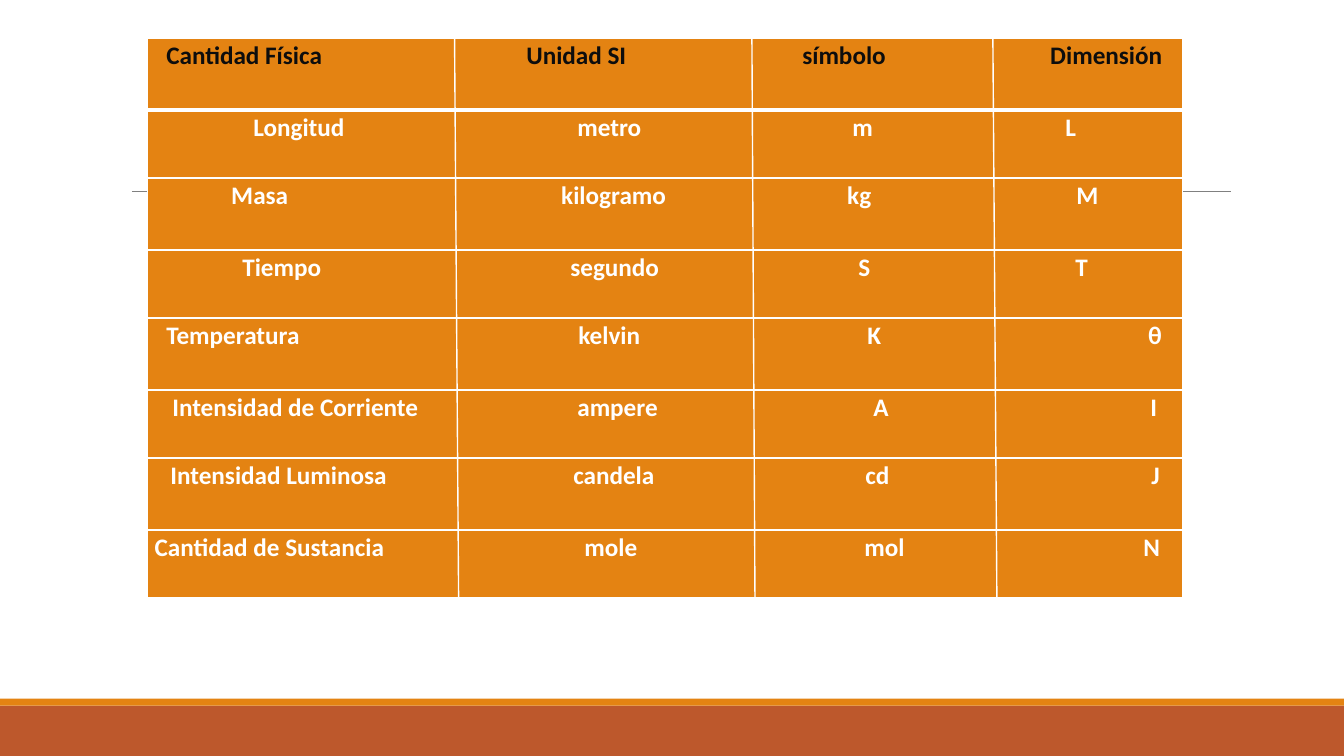
"""Build a slide with the table of SI base quantities, units, symbols and dimensions."""
import pptx
import pptx.dml.color
import pptx.enum.shapes
import pptx.enum.text
import pptx.oxml
import pptx.oxml.ns
import pptx.util

Pt = pptx.util.Pt
RGBColor = pptx.dml.color.RGBColor

WHITE = RGBColor(0xFF, 0xFF, 0xFF)
INK = RGBColor(0x0D, 0x0D, 0x0D)
ORANGE = RGBColor(0xE4, 0x83, 0x12)
RUST = RGBColor(0xBD, 0x58, 0x2C)
GRAY = RGBColor(0x80, 0x80, 0x80)

SLIDE_WIDTH, SLIDE_HEIGHT = 960, 540
BANDS = [(504, 36, RUST), (499, 5, ORANGE)]
TITLE_RULE = (94.3, 136.8, 879.1, 136.8)

QUANTITIES = [
    ("Cantidad Física", "Unidad SI", "símbolo", "Dimensión"),
    ("Longitud", "metro", "m", "L"),
    ("Masa", "kilogramo", "kg", "M"),
    ("Tiempo", "segundo", "S", "T"),
    ("Temperatura", "kelvin", "K", "θ"),
    ("Intensidad de Corriente", "ampere", "A", "I"),
    ("Intensidad Luminosa", "candela", "cd", "J"),
    ("Cantidad de Sustancia", "mole", "mol", "N"),
]
TEXT_STARTS = [
    (8.4, 265.6, 462.7, 639.8),
    (70.6, 302, 498.4, 650.6),
    (54.8, 290.5, 494.8, 658.4),
    (62.7, 297, 502.7, 657.7),
    (8.4, 302.7, 509.1, 709.8),
    (12.7, 302, 513.4, 711.3),
    (11.3, 299.1, 507.7, 712),
    (0, 307, 507, 706.3),
]
TABLE_LEFT, TABLE_TOP, TABLE_WIDTH = 105.4, 27.2, 739
ROW_HEIGHTS = (51.4, 48.6)
CELL_INSET = 5
DIVIDERS = [(324.7, 327.6), (537.1, 539.3), (709.2, 712.1)]
DIVIDER_TOP, DIVIDER_BOTTOM = 26.6, 429.8


def set_values(target, values):
    for name, value in values.items():
        setattr(target, name, value)


def add_line(slide, ends, color, width):
    line = slide.shapes.add_connector(
        pptx.enum.shapes.MSO_CONNECTOR.STRAIGHT, *(Pt(end) for end in ends))
    line.line.color.rgb = color
    line.line.width = Pt(width)
    properties = line._element.spPr
    properties.append(pptx.oxml.parse_xml(
        f'<a:effectLst {pptx.oxml.ns.nsdecls("a")}/>'))


def add_borders(cell, top, bottom):
    properties = cell._tc.get_or_add_tcPr()
    sides = {"lnL": 1, "lnR": 1, "lnT": top, "lnB": bottom}
    for index, (side, width) in enumerate(sides.items()):
        properties.insert(index, pptx.oxml.parse_xml(
            f'<a:{side} {pptx.oxml.ns.nsdecls("a")} w="{Pt(width)}">'
            f'<a:solidFill><a:srgbClr val="{WHITE}"/></a:solidFill></a:{side}>'))


def add_tab_stops(paragraph, positions):
    stops = "".join(f'<a:tab pos="{Pt(position)}" algn="l"/>' for position in positions)
    paragraph._p.get_or_add_pPr().append(pptx.oxml.parse_xml(
        f'<a:tabLst {pptx.oxml.ns.nsdecls("a")}>{stops}</a:tabLst>'))


def fill_row(cell, index, fields, starts):
    set_values(cell, {
        "margin_left": Pt(CELL_INSET + starts[0]), "margin_right": Pt(CELL_INSET),
        "margin_top": 0, "margin_bottom": 0,
        "vertical_anchor": pptx.enum.text.MSO_ANCHOR.TOP,
    })
    cell.fill.solid()
    cell.fill.fore_color.rgb = ORANGE
    add_borders(cell, top=3 if index == 1 else 1, bottom=3 if index == 0 else 1)
    paragraph = cell.text_frame.paragraphs[0]
    set_values(paragraph, {
        "alignment": pptx.enum.text.PP_ALIGN.LEFT, "line_spacing": 1.07})
    add_tab_stops(paragraph, [start - starts[0] for start in starts[1:]])
    run = paragraph.add_run()
    run.text = "\t".join(fields)
    set_values(run.font, {"name": "Calibri", "size": Pt(18), "bold": True})
    run.font.color.rgb = INK if index == 0 else WHITE


def add_quantity_table(slide):
    heights = [ROW_HEIGHTS[index % 2] for index in range(len(QUANTITIES))]
    table = slide.shapes.add_table(
        len(QUANTITIES), 1, Pt(TABLE_LEFT), Pt(TABLE_TOP),
        Pt(TABLE_WIDTH), Pt(sum(heights))).table
    set_values(table, {"first_row": False, "horz_banding": False})
    for index, (fields, starts) in enumerate(zip(QUANTITIES, TEXT_STARTS)):
        table.rows[index].height = Pt(heights[index])
        fill_row(table.cell(index, 0), index, fields, starts)


def main():
    presentation = pptx.Presentation()
    set_values(presentation, {
        "slide_width": Pt(SLIDE_WIDTH), "slide_height": Pt(SLIDE_HEIGHT)})
    slide = presentation.slides.add_slide(presentation.slide_layouts[6])
    for top, height, color in BANDS:
        band = slide.shapes.add_shape(
            pptx.enum.shapes.MSO_SHAPE.RECTANGLE,
            0, Pt(top), Pt(SLIDE_WIDTH), Pt(height))
        band.shadow.inherit = False
        band.fill.solid()
        band.fill.fore_color.rgb = color
        band.line.fill.background()
    add_line(slide, TITLE_RULE, GRAY, 0.5)
    add_quantity_table(slide)
    for top_x, bottom_x in DIVIDERS:
        add_line(slide, (top_x, DIVIDER_TOP, bottom_x, DIVIDER_BOTTOM), WHITE, 1)
    presentation.save("out.pptx")


if __name__ == "__main__":
    main()
